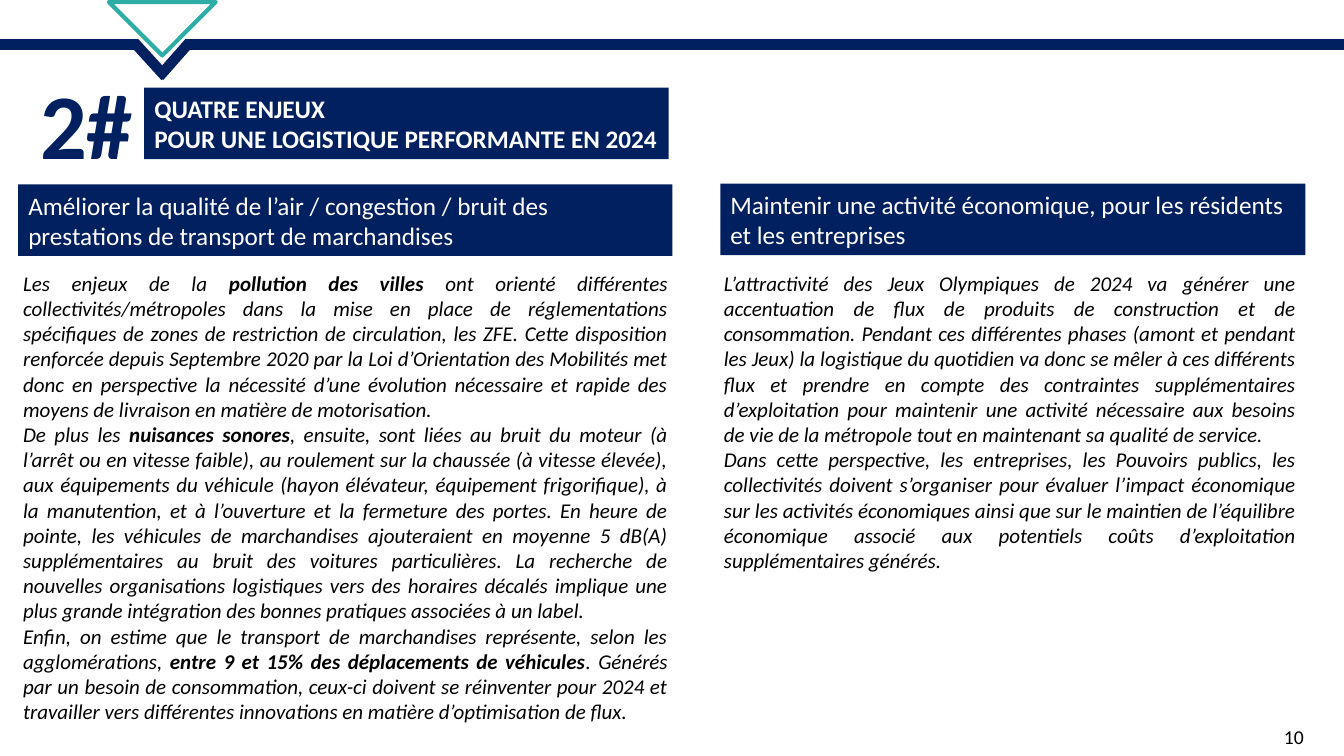
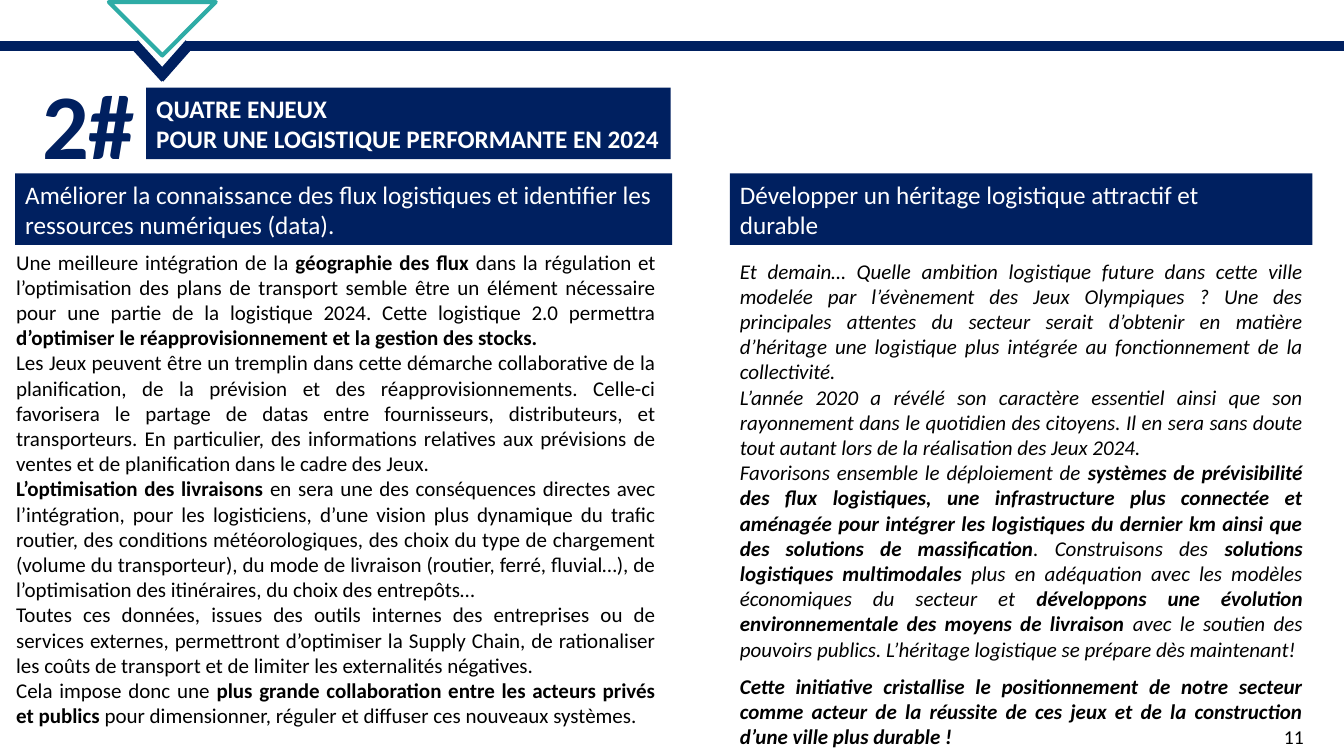
from dataclasses import dataclass

from lxml.etree import SubElement
from pptx import Presentation
from pptx.dml.color import RGBColor
from pptx.enum.shapes import MSO_CONNECTOR as Conn, MSO_SHAPE as Shape
from pptx.enum.text import MSO_ANCHOR as Anchor, MSO_AUTO_SIZE as Auto, PP_ALIGN as Align
from pptx.oxml.ns import qn
from pptx.util import Pt

NAVY = RGBColor(0x00, 0x20, 0x60)
TEAL = RGBColor(0x2E, 0xAC, 0xA6)
WHITE = RGBColor(0xFF, 0xFF, 0xFF)
BLACK = RGBColor(0x00, 0x00, 0x00)
FONT = "Calibri"
WIDTH, HEIGHT = 960, 540
BAND_H = 51.1
COMPARISON = 4
TITLE = ["QUATRE ENJEUX", "POUR UNE LOGISTIQUE PERFORMANTE EN 2024"]


@dataclass(frozen=True)
class Box:
    """Position and size in points."""
    x: float
    y: float
    w: float
    h: float


@dataclass(frozen=True)
class Column:
    """A heading band and the text below it, with ** around bold words."""
    head: list[str]
    head_box: Box
    body: list[str]
    body_box: Box
    italic: bool = True
    last_gap: float = 0


@dataclass(frozen=True)
class Page:
    """One slide: its number, small offsets and two columns."""
    number: int
    title_dx: float
    rule_dy: float
    left: Column
    right: Column


PAGES = [
    Page(
        10, 0, 0,
        Column(
            ["Améliorer la qualité de l’air / congestion / bruit des prestations de transport de marchandises"],
            Box(13, 131.7, 467.2, BAND_H),
            [
                "Les enjeux de la **pollution des villes** ont orienté différentes collectivités/métropoles "
                "dans la mise en place de réglementations spécifiques de zones de restriction de circulation, "
                "les ZFE. Cette disposition renforcée depuis Septembre 2020 par la Loi d’Orientation des "
                "Mobilités met donc en perspective la nécessité d’une évolution nécessaire et rapide des "
                "moyens de livraison en matière de motorisation.",
                "De plus les **nuisances sonores**, ensuite, sont liées au bruit du moteur (à l’arrêt ou en "
                "vitesse faible), au roulement sur la chaussée (à vitesse élevée), aux équipements du véhicule "
                "(hayon élévateur, équipement frigorifique), à la manutention, et à l’ouverture et la fermeture "
                "des portes. En heure de pointe, les véhicules de marchandises ajouteraient en moyenne 5 dB(A) "
                "supplémentaires au bruit des voitures particulières. La recherche de nouvelles organisations "
                "logistiques vers des horaires décalés implique une plus grande intégration des bonnes "
                "pratiques associées à un label.",
                "Enfin, on estime que le transport de marchandises représente, selon les agglomérations, "
                "**entre 9 et 15% des déplacements de véhicules**. Générés par un besoin de consommation, "
                "ceux-ci doivent se réinventer pour 2024 et travailler vers différentes innovations en "
                "matière d’optimisation de flux.",
            ],
            Box(9.3, 189.4, 474.5, 334),
        ),
        Column(
            ["Maintenir une activité économique, pour les résidents et les entreprises"],
            Box(514.5, 131.2, 417.9, BAND_H),
            [
                "L’attractivité des Jeux Olympiques de 2024 va générer une accentuation de flux de produits "
                "de construction et de consommation. Pendant ces différentes phases (amont et pendant les "
                "Jeux) la logistique du quotidien va donc se mêler à ces différents flux et prendre en compte "
                "des contraintes supplémentaires d’exploitation pour maintenir une activité nécessaire aux "
                "besoins de vie de la métropole tout en maintenant sa qualité de service.",
                "Dans cette perspective, les entreprises, les Pouvoirs publics, les collectivités doivent "
                "s’organiser pour évaluer l’impact économique sur les activités économiques ainsi que sur le "
                "maintien de l’équilibre économique associé aux potentiels coûts d’exploitation "
                "supplémentaires générés.",
            ],
            Box(509.9, 189.4, 422.5, 243.4),
        ),
    ),
    Page(
        11, 1.4, 1.1,
        Column(
            ["Améliorer la connaissance des flux logistiques et identifier les ressources numériques (data)."],
            Box(10.8, 123.8, 469.4, BAND_H),
            [
                "Une meilleure intégration de la **géographie des flux** dans la régulation et l’optimisation "
                "des plans de transport semble être un élément nécessaire pour une partie de la logistique "
                "2024. Cette logistique 2.0 permettra **d’optimiser le réapprovisionnement et la gestion des "
                "stocks.**",
                "Les Jeux peuvent être un tremplin dans cette démarche collaborative de la planification, de "
                "la prévision et des réapprovisionnements. Celle-ci favorisera le partage de datas entre "
                "fournisseurs, distributeurs, et transporteurs. En particulier, des informations relatives "
                "aux prévisions de ventes et de planification dans le cadre des Jeux.",
                "**L’optimisation des livraisons** en sera une des conséquences directes avec l’intégration, "
                "pour les logisticiens, d’une vision plus dynamique du trafic routier, des conditions "
                "météorologiques, des choix du type de chargement (volume du transporteur), du mode de "
                "livraison (routier, ferré, fluvial…), de l’optimisation des itinéraires, du choix des "
                "entrepôts…",
                "Toutes ces données, issues des outils internes des entreprises ou de services externes, "
                "permettront d’optimiser la Supply Chain, de rationaliser les coûts de transport et de "
                "limiter les externalités négatives.",
                "Cela impose donc une **plus grande collaboration entre les acteurs privés et publics** pour "
                "dimensionner, réguler et diffuser ces nouveaux systèmes.",
            ],
            Box(4.3, 174.3, 470.9, 352.8),
            italic=False,
        ),
        Column(
            ["Développer un héritage logistique attractif et", "durable"],
            Box(521.3, 123.8, 416.1, BAND_H),
            [
                "Et demain… Quelle ambition logistique future dans cette ville modelée par l’évènement des "
                "Jeux Olympiques ? Une des principales attentes du secteur serait d’obtenir en matière "
                "d’héritage une logistique plus intégrée au fonctionnement de la collectivité.",
                "L’année 2020 a révélé son caractère essentiel ainsi que son rayonnement dans le quotidien "
                "des citoyens. Il en sera sans doute tout autant lors de la réalisation des Jeux 2024.",
                "Favorisons ensemble le déploiement de **systèmes de prévisibilité des flux logistiques, une "
                "infrastructure plus connectée et aménagée pour intégrer les logistiques du dernier km ainsi "
                "que des solutions de massification**. Construisons des **solutions logistiques "
                "multimodales** plus en adéquation avec les modèles économiques du secteur et **développons "
                "une évolution environnementale des moyens de livraison** avec le soutien des pouvoirs "
                "publics. L’héritage logistique se prépare dès maintenant!",
                "**Cette initiative cristallise le positionnement de notre secteur comme acteur de la "
                "réussite de ces jeux et de la construction d’une ville plus durable !**",
            ],
            Box(521.3, 180.7, 416.1, 358),
            last_gap=8.5,
        ),
    ),
]


def place(sp, box: Box) -> None:
    """Move and size a shape."""
    sp.left, sp.top, sp.width, sp.height = Pt(box.x), Pt(box.y), Pt(box.w), Pt(box.h)


def write(sp, text: list[str], *, size: float, color: RGBColor = BLACK, bold: bool = False,
          italic: bool = False, align: Align = Align.LEFT, anchor: Anchor = Anchor.TOP,
          last_gap: float = 0) -> None:
    """Write paragraphs into a shape, with ** around bold words."""
    tf = sp.text_frame
    tf.word_wrap = True
    tf.auto_size = Auto.NONE
    tf.vertical_anchor = anchor
    tf.margin_left, tf.margin_right = Pt(7.2), Pt(6.8)
    tf.margin_top = tf.margin_bottom = Pt(3.6)
    for i, line in enumerate(text):
        p = tf.paragraphs[0] if i == 0 else tf.add_paragraph()
        p.alignment = align
        p.space_before = Pt(last_gap if 0 < i == len(text) - 1 else 0)
        pPr = p._p.get_or_add_pPr()
        pPr.set("marL", "0")
        pPr.set("indent", "0")
        SubElement(pPr, qn("a:buNone"))
        for j, part in enumerate(line.split("**")):
            if part:
                r = p.add_run()
                r.text = part
                r.font.name, r.font.size = FONT, Pt(size)
                r.font.bold, r.font.italic = bold or j % 2 == 1, italic
                r.font.color.rgb = color


def add_label(s, text: str, box: Box, **fmt) -> None:
    """Add a text box."""
    sp = s.shapes.add_textbox(0, 0, 0, 0)
    place(sp, box)
    write(sp, [text], **fmt)


def fill_band(sp, text: list[str], box: Box, *, bold: bool = False) -> None:
    """Turn a placeholder into a navy band with white text."""
    place(sp, box)
    sp.fill.solid()
    sp.fill.fore_color.rgb = NAVY
    write(sp, text, size=18, color=WHITE, bold=bold, anchor=Anchor.MIDDLE)


def add_rule(s, x1: float, y1: float, x2: float, y2: float) -> None:
    """Draw one thick navy line."""
    ln = s.shapes.add_connector(Conn.STRAIGHT, Pt(x1), Pt(y1), Pt(x2), Pt(y2))
    ln.line.color.rgb = NAVY
    ln.line.width = Pt(7.5)
    SubElement(ln._element.spPr, qn("a:effectLst"))


def add_header(s, dy: float) -> None:
    """Draw the notched rule and the triangle at the top."""
    y, top, tip = 31.7 + dy, 30.2 + dy, 54.7 + dy
    add_rule(s, WIDTH, y, 133.2, y)
    add_rule(s, 95.8, top, 118.1, tip)
    add_rule(s, 98.6, y, 0, y)
    add_rule(s, 135.4, top, 113.8, tip)
    sp = s.shapes.add_shape(Shape.ISOSCELES_TRIANGLE, 0, 0, 0, 0)
    place(sp, Box(77.8, 1.4, 76.3, 38.2))
    sp.rotation = 180
    sp.shadow.inherit = False
    sp.fill.solid()
    sp.fill.fore_color.rgb = WHITE
    sp.line.color.rgb = TEAL
    sp.line.width = Pt(3)


def add_column(head, body, col: Column) -> None:
    """Fill the heading and body placeholders of a column."""
    fill_band(head, col.head, col.head_box)
    place(body, col.body_box)
    write(body, col.body, size=15, italic=col.italic, align=Align.JUSTIFY, last_gap=col.last_gap)


def add_page(prs, page: Page) -> None:
    """Build one slide."""
    s = prs.slides.add_slide(prs.slide_layouts[COMPARISON])
    title, left_head, left_body, right_head, right_body = s.placeholders
    add_header(s, page.rule_dy)
    add_label(s, "2#", Box(21.6 + page.title_dx, 44.6, 92.9, 87.1), size=66, color=NAVY, bold=True)
    fill_band(title, TITLE, Box(103 + page.title_dx, 62.6, 374.6, BAND_H), bold=True)
    add_column(left_head, left_body, page.left)
    add_column(right_head, right_body, page.right)
    add_label(s, str(page.number), Box(910.1, 514.1, 38.2, 24.5), size=14)


def main() -> None:
    """Build and save the presentation."""
    prs = Presentation()
    prs.slide_width, prs.slide_height = Pt(WIDTH), Pt(HEIGHT)
    for page in PAGES:
        add_page(prs, page)
    prs.save("out.pptx")


if __name__ == "__main__":
    main()
